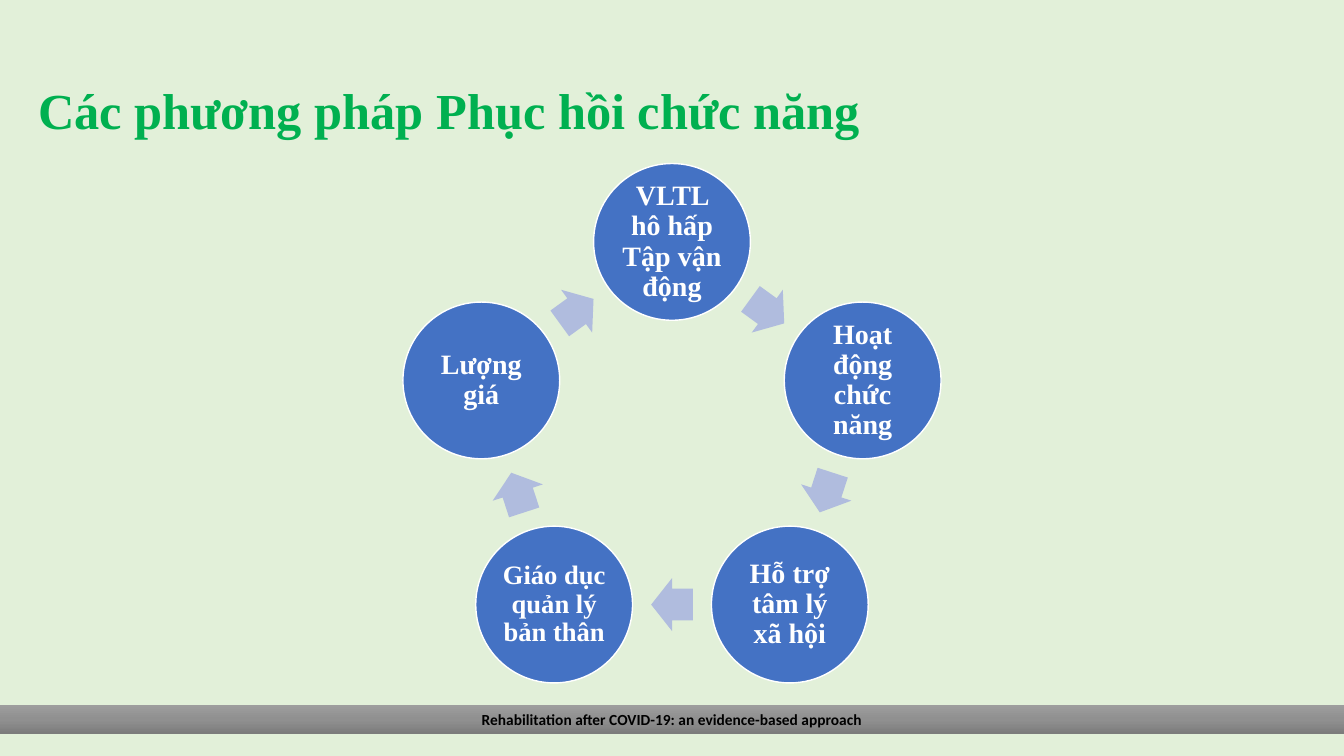
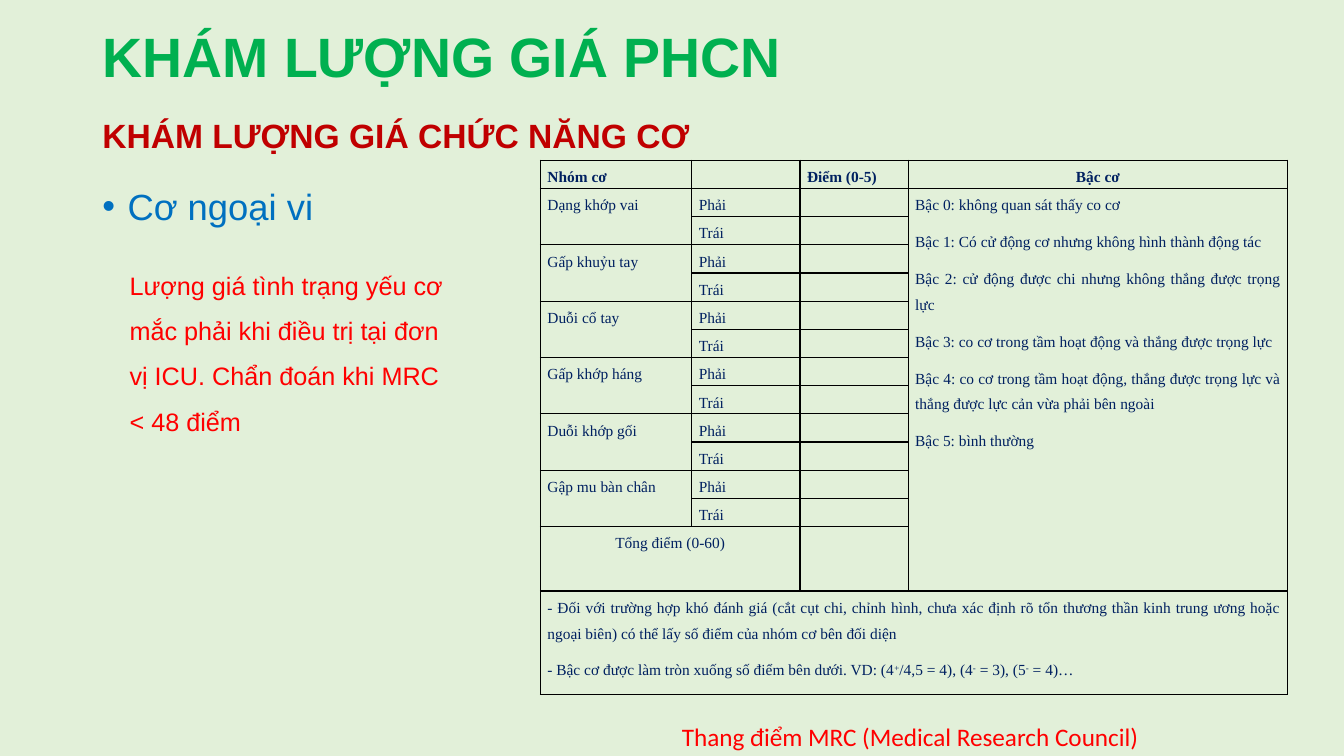
from copy import deepcopy
from math import cos, radians, sin

from lxml.etree import SubElement
from pptx import Presentation
from pptx.dml.color import RGBColor
from pptx.enum.shapes import MSO_SHAPE
from pptx.enum.text import MSO_ANCHOR, MSO_AUTO_SIZE, PP_ALIGN
from pptx.oxml.ns import qn
from pptx.util import Pt

PALE_GREEN = RGBColor(0xE2, 0xF0, 0xD9)
GREEN = RGBColor(0x00, 0xB0, 0x50)
DARK_RED = RGBColor(0xC0, 0x00, 0x00)
RED = RGBColor(0xFF, 0x00, 0x00)
BLUE = RGBColor(0x44, 0x72, 0xC4)
SKY_BLUE = RGBColor(0x00, 0x70, 0xC0)
LAVENDER = RGBColor(0xB0, 0xBC, 0xDE)
NAVY = RGBColor(0x00, 0x20, 0x60)
WHITE = RGBColor(0xFF, 0xFF, 0xFF)
BLACK = RGBColor(0x00, 0x00, 0x00)
BAR_GRAYS = [RGBColor(0x9D, 0x9D, 0x9D), RGBColor(0x90, 0x90, 0x90), RGBColor(0x7C, 0x7C, 0x7C)]

SERIF, SANS, PLAIN = "Times New Roman", "Arial", "Calibri"
WIDTH, HEIGHT = 960, 540


class Deck:
    def __init__(self):
        self.presentation = Presentation()
        self.presentation.slide_width = Pt(WIDTH)
        self.presentation.slide_height = Pt(HEIGHT)
        background = self.presentation.slide_master.background.fill
        background.solid()
        background.fore_color.rgb = PALE_GREEN
        self.slide = None

    def set_text(self, frame, text, font, size, color, bold=False,
                 align=PP_ALIGN.LEFT, spacing=None, after=None):
        frame.word_wrap = True
        frame.text = text
        for paragraph in frame.paragraphs:
            paragraph.alignment = align
            paragraph.line_spacing = spacing
            if after is not None:
                paragraph.space_after = Pt(after)
            base, *pieces = paragraph.text.split("^")
            paragraph.text = base
            for index, piece in enumerate(pieces):
                run = paragraph.add_run()
                run.text = piece
                if index % 2 == 0:
                    run.font._element.set("baseline", "30000")
            for run in paragraph.runs:
                run.font.name = font
                run.font.size = Pt(size)
                run.font.bold = bold
                run.font.color.rgb = color
            if not paragraph.runs:
                paragraph._p.get_or_add_endParaRPr().set("sz", str(size * 100))

    def add_slide(self, title, box, font, size):
        self.slide = self.presentation.slides.add_slide(self.presentation.slide_layouts[5])
        heading = self.slide.shapes.title
        heading.left, heading.top, heading.width, heading.height = map(Pt, box)
        frame = heading.text_frame
        frame.auto_size = MSO_AUTO_SIZE.NONE
        frame.vertical_anchor = MSO_ANCHOR.MIDDLE
        self.set_text(frame, title, font, size, GREEN, bold=True, spacing=0.9)

    def textbox(self, text, box, font, size, color, **style):
        frame = self.slide.shapes.add_textbox(*map(Pt, box)).text_frame
        self.set_text(frame, text, font, size, color, **style)
        return frame

    def bullet(self, text, box, font, size, color):
        frame = self.textbox(text, box, font, size, color, align=PP_ALIGN.JUSTIFY, after=8)
        paragraph = frame.paragraphs[0]
        paragraph.space_before = Pt(10)
        properties = paragraph._p.get_or_add_pPr()
        properties.set("marL", str(Pt(18)))
        properties.set("indent", str(Pt(-18)))
        SubElement(properties, qn("a:buFont"), typeface=SANS)
        SubElement(properties, qn("a:buChar"), char="•")

    def shape(self, kind, box, fill=None):
        shape = self.slide.shapes.add_shape(kind, *map(Pt, box))
        shape.shadow.inherit = False
        shape.line.fill.background()
        if fill is not None:
            shape.fill.solid()
            shape.fill.fore_color.rgb = fill
        return shape

    def circle(self, text, x, y, diameter, size):
        circle = self.shape(MSO_SHAPE.OVAL, (x - diameter / 2, y - diameter / 2, diameter, diameter), BLUE)
        circle.line.color.rgb = WHITE
        circle.line.width = Pt(1)
        frame = circle.text_frame
        frame.margin_left = frame.margin_right = frame.margin_top = frame.margin_bottom = Pt(2)
        self.set_text(frame, text, SERIF, size, WHITE, bold=True, align=PP_ALIGN.CENTER, spacing=0.9)

    def arrow(self, x, y, width, height, rotation):
        arrow = self.shape(MSO_SHAPE.RIGHT_ARROW, (x - width / 2, y - height / 2, width, height), LAVENDER)
        arrow.adjustments[0] = 0.6
        arrow.adjustments[1] = 0.5
        arrow.rotation = rotation

    def cycle(self, steps, x, y, radius, diameter):
        turn = 360 / len(steps)
        arrow_radius = radius * cos(radians(turn / 2))
        for index, (text, size) in enumerate(steps):
            angle = radians(index * turn)
            self.circle(text, x + radius * sin(angle), y - radius * cos(angle), diameter, size)
            rotation = (index + 0.5) * turn
            angle = radians(rotation)
            self.arrow(x + arrow_radius * sin(angle), y - arrow_radius * cos(angle), 29.8, 37.8, rotation)

    def footer_bar(self, text):
        bar = self.shape(MSO_SHAPE.RECTANGLE, (0, 503.5, WIDTH, 20.6))
        bar.fill.gradient()
        bar.fill.gradient_angle = 270
        first, last = bar.fill.gradient_stops
        first.color.rgb, last.color.rgb = BAR_GRAYS[0], BAR_GRAYS[2]
        stops = bar._element.spPr.find(".//" + qn("a:gsLst"))
        middle = deepcopy(stops[0])
        middle.set("pos", "50000")
        stops.insert(1, middle)
        bar.fill.gradient_stops[1].color.rgb = BAR_GRAYS[1]
        self.set_text(bar.text_frame, text, PLAIN, 11, BLACK, bold=True, align=PP_ALIGN.CENTER)

    def table(self, rows, left, top, widths, heights, merges, centered):
        table = self.slide.shapes.add_table(
            len(heights), len(widths), Pt(left), Pt(top), Pt(sum(widths)), Pt(sum(heights))).table
        table.first_row = table.horz_banding = False
        for column, width in zip(table.columns, widths):
            column.width = Pt(width)
        for row, height in zip(table.rows, heights):
            row.height = Pt(height)
        for row_index, row in enumerate(rows):
            for column_index, text in enumerate(row):
                place = (row_index, column_index)
                cell = table.cell(*place)
                cell.margin_left = cell.margin_right = Pt(5)
                cell.margin_top = cell.margin_bottom = Pt(0)
                align = PP_ALIGN.CENTER if place in centered else PP_ALIGN.JUSTIFY
                self.set_text(cell.text_frame, text, SERIF, 11, NAVY, bold=row_index == 0,
                              align=align, spacing=1.5, after=8)
                cell.fill.background()
                self.cell_borders(cell)
        for start, end in merges:
            table.cell(*start).merge(table.cell(*end))

    def cell_borders(self, cell):
        properties = cell._tc.get_or_add_tcPr()
        for index, side in enumerate(("a:lnL", "a:lnR", "a:lnT", "a:lnB")):
            border = SubElement(properties, qn(side), w=str(Pt(1)))
            SubElement(SubElement(border, qn("a:solidFill")), qn("a:srgbClr"), val=str(BLACK))
            properties.insert(index, border)


def rehabilitation_methods(deck):
    deck.add_slide("Các phương pháp Phục hồi chức năng", (20, 29, 874, 104), SERIF, 36)
    methods = [
        ("VLTL hô hấp Tập vận động", 20),
        ("Hoạt động chức năng", 20),
        ("Hỗ trợ tâm lý xã hội", 20),
        ("Giáo dục quản lý bản thân", 19),
        ("Lượng giá", 20),
    ]
    deck.cycle(methods, 480, 316, 143.2, 112)
    deck.footer_bar("Rehabilitation after COVID-19: an evidence-based approach")


def muscle_assessment(deck):
    deck.add_slide("KHÁM LƯỢNG GIÁ PHCN", (66, 20, 828, 45), SANS, 39.6)
    deck.textbox("KHÁM LƯỢNG GIÁ CHỨC NĂNG CƠ", (66, 78.5, 640, 36), SANS, 24, DARK_RED, bold=True)
    deck.bullet("Cơ ngoại vi", (66, 128, 300, 44), SANS, 26, SKY_BLUE)

    muscles = ["Dạng khớp vai", "Gấp khuỷu tay", "Duỗi cổ tay",
               "Gấp khớp háng", "Duỗi khớp gối", "Gập mu bàn chân"]
    grades = "\n".join([
        "Bậc 0: không quan sát thấy co cơ",
        "Bậc 1: Có cử động cơ nhưng không hình thành động tác",
        "Bậc 2: cử động được chi nhưng không thắng được trọng lực",
        "Bậc 3: co cơ trong tầm hoạt động và thắng được trọng lực",
        "Bậc 4: co cơ trong tầm hoạt động, thắng được trọng lực và thắng được lực cản vừa phải bên ngoài",
        "Bậc 5: bình thường",
    ])
    notes = "\n".join([
        "- Đối với trường hợp khó đánh giá (cắt cụt chi, chỉnh hình, chưa xác định rõ tổn thương "
        "thần kinh trung ương hoặc ngoại biên) có thể lấy số điểm của nhóm cơ bên đối diện",
        "- Bậc cơ được làm tròn xuống số điểm bên dưới. VD: (4^+^/4,5 = 4), (4^‑^ = 3), (5^-^ = 4)…",
    ])
    rows = [["Nhóm cơ", "", "Điểm (0-5)", "Bậc cơ"]]
    for muscle in muscles:
        rows += [[muscle, "Phải", "", ""], ["", "Trái", "", ""]]
    rows[1][3] = grades
    rows += [["Tổng điểm (0-60)", "", "", ""], [notes, "", "", ""]]

    total, last = len(rows) - 2, len(rows) - 1
    merges = [((row, 0), (row + 1, 0)) for row in range(1, total, 2)]
    merges += [((1, 3), (total, 3)), ((total, 0), (total, 1)), ((last, 0), (last, 3))]
    heights = [20.15] * total + [46, 74]
    deck.table(rows, 386, 114.5, [108.2, 77.3, 77.3, 271], heights, merges, {(0, 3), (total, 0)})

    deck.textbox("Thang điểm MRC (Medical Research Council)", (480, 512, 379, 29), PLAIN, 18, RED)
    deck.textbox("Lượng giá tình trạng yếu cơ mắc phải khi điều trị tại đơn vị ICU. Chẩn đoán khi MRC < 48 điểm",
                 (85.5, 178.5, 240.5, 134), SANS, 18, RED, spacing=1.5)


def main():
    deck = Deck()
    rehabilitation_methods(deck)
    muscle_assessment(deck)
    deck.presentation.save("out.pptx")


if __name__ == "__main__":
    main()
